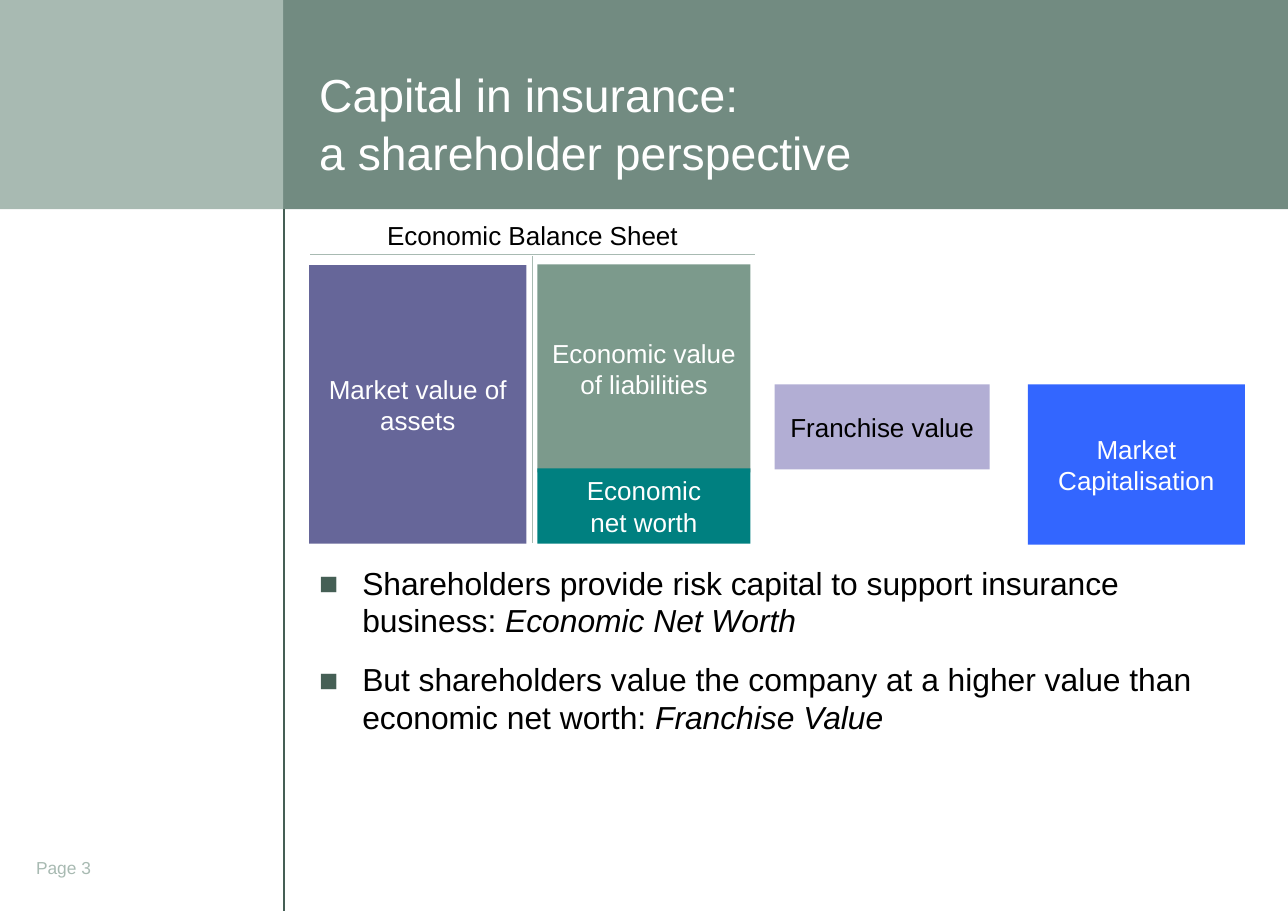
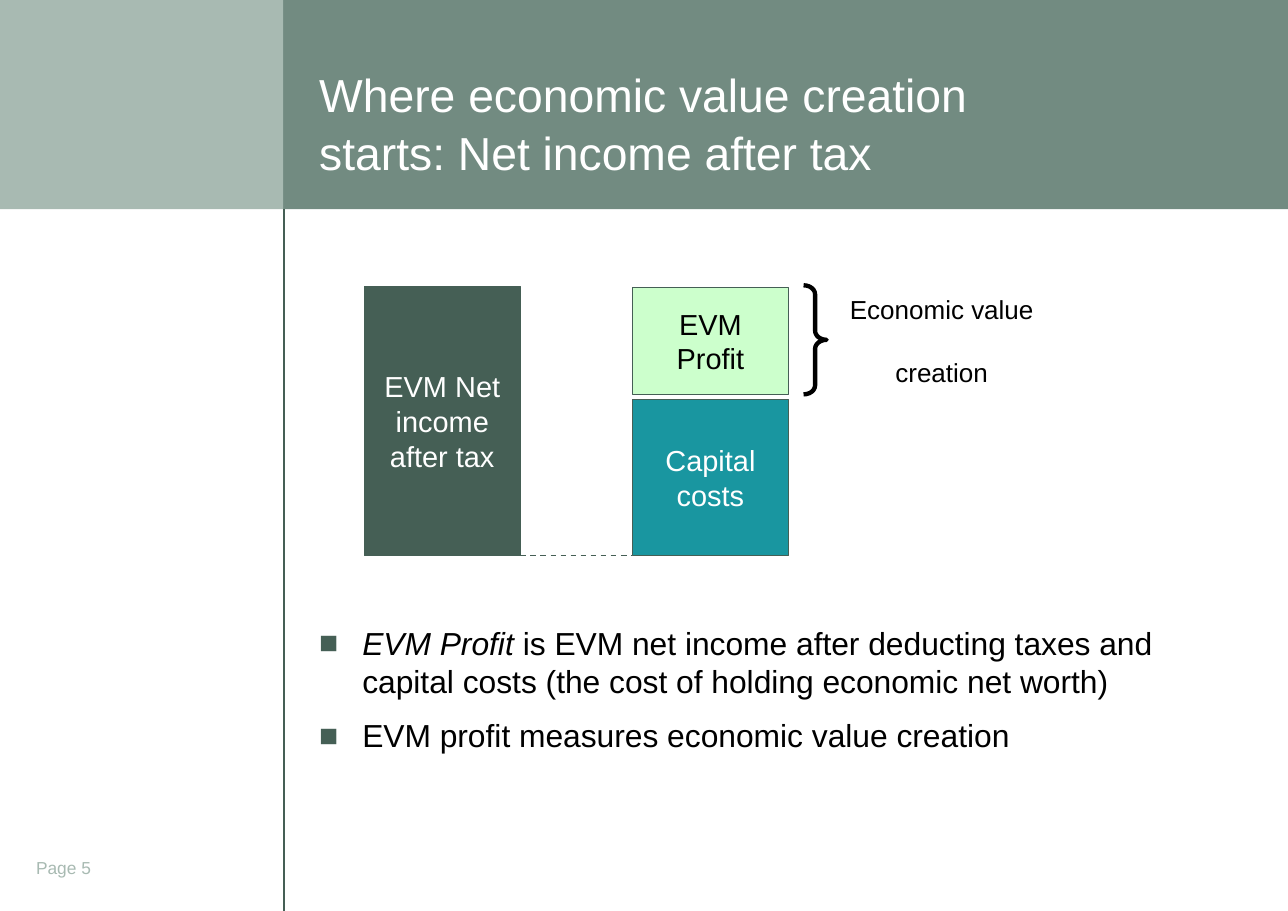
from lxml.etree import SubElement
from pptx import Presentation
from pptx.dml.color import RGBColor
from pptx.enum.dml import MSO_LINE
from pptx.enum.shapes import MSO_CONNECTOR, MSO_SHAPE
from pptx.enum.text import MSO_ANCHOR, PP_ALIGN
from pptx.oxml.ns import qn
from pptx.util import Emu, Pt

PX = 914400 / 104
FONT = "Arial"
WIDTH, HEIGHT = 1287, 910
SIDE_W, HEADER_H = 283, 209

WHITE = RGBColor(0xFF, 0xFF, 0xFF)
BLACK = RGBColor(0, 0, 0)
SAGE = RGBColor(0xA8, 0xBA, 0xB2)
HEADER_GREEN = RGBColor(0x72, 0x8B, 0x81)
DARK_GREEN = RGBColor(0x45, 0x5F, 0x55)
PURPLE = RGBColor(0x66, 0x66, 0x99)
LIABILITY_GREEN = RGBColor(0x7C, 0x9A, 0x8C)
TEAL = RGBColor(0, 0x80, 0x80)
LILAC = RGBColor(0xB2, 0xAE, 0xD4)
BLUE = RGBColor(0x33, 0x66, 0xFF)
CYAN = RGBColor(0x19, 0x96, 0xA0)
MINT = RGBColor(0xCC, 0xFF, 0xCC)

# Content: boxes are (text, (left, top, width, height), fill, text colour)
CAPITAL = {
    "title": "Capital in insurance: \va shareholder perspective",
    "page": "Page 3",
    "boxes": [
        ("Market value of assets", (309, 265, 217, 278), PURPLE, WHITE),
        ("Economic value of liabilities", (537, 264, 213, 208), LIABILITY_GREEN, WHITE),
        ("Economic\nnet worth", (537, 468, 213, 75), TEAL, WHITE),
        ("Market Capitalisation", (1027, 384, 217, 160), BLUE, WHITE),
        ("Franchise value", (774, 384, 215, 85), LILAC, BLACK),
    ],
    # Each bullet is a list of (text, italic) runs
    "bullets": [
        [("Shareholders provide risk capital to support insurance business: ", False),
         ("Economic Net Worth", True)],
        [("But shareholders value the company at a higher value than "
          "economic net worth: ", False),
         ("Franchise Value", True)],
    ],
}
VALUE_CREATION = {
    "title": "Where economic value creation starts: Net income after tax",
    "page": "Page 5",
    "boxes": [
        ("EVM Net income\nafter tax", (364, 286, 156, 269), DARK_GREEN, WHITE),
        ("Capital costs", (632, 399, 156, 156), CYAN, WHITE),
        ("EVM\nProfit", (632, 287, 156, 107), MINT, BLACK),
    ],
    "bullets": [
        [("EVM Profit", True),
         (" is EVM net income after deducting taxes and capital costs "
          "(the cost of holding economic net worth)", False)],
        [("EVM profit measures economic value creation", False)],
    ],
}


def px(*lengths):
    return [Emu(round(length * PX)) for length in lengths]


def set_frame(frame, anchor, inset_x=7, inset_y=7):
    frame.word_wrap = True
    frame.vertical_anchor = anchor
    frame.margin_left, frame.margin_right = px(inset_x, inset_x)
    frame.margin_top, frame.margin_bottom = px(inset_y, inset_y)


def set_font(paragraph, size, color):
    paragraph.font.name = FONT
    paragraph.font.size = Pt(size)
    paragraph.font.color.rgb = color


def write(frame, text, size, color, align=PP_ALIGN.LEFT):
    frame.text = text
    for paragraph in frame.paragraphs:
        paragraph.alignment = align
        set_font(paragraph, size, color)


def add_rect(slide, place, fill, outline=None):
    rect = slide.shapes.add_shape(MSO_SHAPE.RECTANGLE, *px(*place))
    rect.shadow.inherit = False
    rect.fill.solid()
    rect.fill.fore_color.rgb = fill
    if outline:
        rect.line.color.rgb = outline
        rect.line.width = Pt(0.75)
    else:
        rect.line.fill.background()
    return rect


def add_line(slide, ends, color, width):
    line = slide.shapes.add_connector(MSO_CONNECTOR.STRAIGHT, *px(*ends))
    line.line.color.rgb = color
    line.line.width = Pt(width)
    SubElement(line.element.spPr, qn("a:effectLst"))
    return line


def add_label(slide, place, text, size, color, anchor, align=PP_ALIGN.LEFT):
    frame = slide.shapes.add_textbox(*px(*place)).text_frame
    set_frame(frame, anchor)
    write(frame, text, size, color, align)
    return frame


def add_boxes(slide, boxes, size, insets, outline=None):
    for text, place, fill, color in boxes:
        frame = add_rect(slide, place, fill, outline).text_frame
        set_frame(frame, MSO_ANCHOR.MIDDLE, *insets)
        write(frame, text, size, color, PP_ALIGN.CENTER)


def add_bullets(slide, bullets, top, height, gap, spacing):
    frame = slide.shapes.add_textbox(*px(312, top, 944, height)).text_frame
    set_frame(frame, MSO_ANCHOR.TOP)
    for number, runs in enumerate(bullets):
        paragraph = frame.add_paragraph() if number else frame.paragraphs[0]
        paragraph.line_spacing = spacing
        if number:
            paragraph.space_before = Pt(gap)
        props = paragraph._p.get_or_add_pPr()
        indent = px(43)[0]
        props.set("marL", str(indent))
        props.set("indent", str(-indent))
        bullet_color = SubElement(props, qn("a:buClr"))
        SubElement(bullet_color, qn("a:srgbClr"), val=str(DARK_GREEN))
        SubElement(props, qn("a:buFont"), typeface=FONT)
        SubElement(props, qn("a:buChar"), char="■")
        set_font(paragraph, 22, BLACK)
        for text, italic in runs:
            run = paragraph.add_run()
            run.text = text
            run.font.italic = italic


def build_layout(layout, scratch):
    """Draw the shared bands on a slide, then move them behind the layout's title."""
    layout.background.fill.solid()
    layout.background.fill.fore_color.rgb = SAGE
    for placeholder in list(layout.placeholders):
        if placeholder.placeholder_format.idx:
            placeholder.element.getparent().remove(placeholder.element)
        else:
            (placeholder.left, placeholder.top,
             placeholder.width, placeholder.height) = px(312, 75, 694, 112)
    body_w, body_h = WIDTH - SIDE_W, HEIGHT - HEADER_H
    bands = [
        add_rect(scratch, (0, HEADER_H, SIDE_W, body_h), WHITE),
        add_rect(scratch, (SIDE_W, HEADER_H, body_w, body_h), WHITE),
        add_rect(scratch, (SIDE_W, 0, body_w, HEADER_H), HEADER_GREEN),
        add_rect(scratch, (0, 0, SIDE_W, HEADER_H), SAGE),
        add_line(scratch, (284, HEADER_H, 284, HEIGHT), DARK_GREEN, 1),
    ]
    for position, band in enumerate(bands, start=2):
        layout.shapes.element.insert(position, band.element)


def add_heading(slide, content):
    frame = slide.shapes.title.text_frame
    set_frame(frame, MSO_ANCHOR.BOTTOM)
    write(frame, content["title"], 32, WHITE)
    frame.paragraphs[0].line_spacing = 1.05
    add_label(slide, (29, 840, 130, 44), content["page"], 12, SAGE, MSO_ANCHOR.BOTTOM)


def build_capital(slide):
    add_heading(slide, CAPITAL)
    add_boxes(slide, CAPITAL["boxes"], 18, (10, 5))
    # Balance sheet heading and its T-shaped rule
    add_label(slide, (361, 214, 342, 42), "Economic Balance Sheet", 18, BLACK,
              MSO_ANCHOR.MIDDLE, PP_ALIGN.CENTER)
    add_line(slide, (310, 254, 754, 254), SAGE, 0.75)
    add_line(slide, (532, 256, 532, 542), SAGE, 0.75)
    add_bullets(slide, CAPITAL["bullets"], 558, 323, 15, 0.98)


def build_value_creation(slide):
    add_heading(slide, VALUE_CREATION)
    add_bullets(slide, VALUE_CREATION["bullets"], 616, 266, 11, 1.0)
    add_boxes(slide, VALUE_CREATION["boxes"], 20, (5, 14), DARK_GREEN)
    baseline = add_line(slide, (520, 555, 632, 555), DARK_GREEN, 1)
    baseline.line.dash_style = MSO_LINE.DASH
    # Brace beside the profit box
    brace = slide.shapes.add_shape(MSO_SHAPE.RIGHT_BRACE, *px(803, 285, 23, 109))
    brace.shadow.inherit = False
    brace.adjustments[0] = 0.39
    brace.fill.background()
    brace.line.color.rgb = BLACK
    brace.line.width = Pt(3)
    caption = add_label(slide, (839, 302, 204, 77), "Economic value\ncreation", 18, BLACK,
                        MSO_ANCHOR.MIDDLE, PP_ALIGN.CENTER)
    caption.paragraphs[1].space_before = Pt(22)


def main():
    deck = Presentation()
    deck.slide_width, deck.slide_height = px(WIDTH, HEIGHT)
    layout = deck.slide_layouts[5]
    capital = deck.slides.add_slide(layout)
    build_layout(layout, capital)
    build_capital(capital)
    build_value_creation(deck.slides.add_slide(layout))
    deck.save("out.pptx")


if __name__ == "__main__":
    main()
